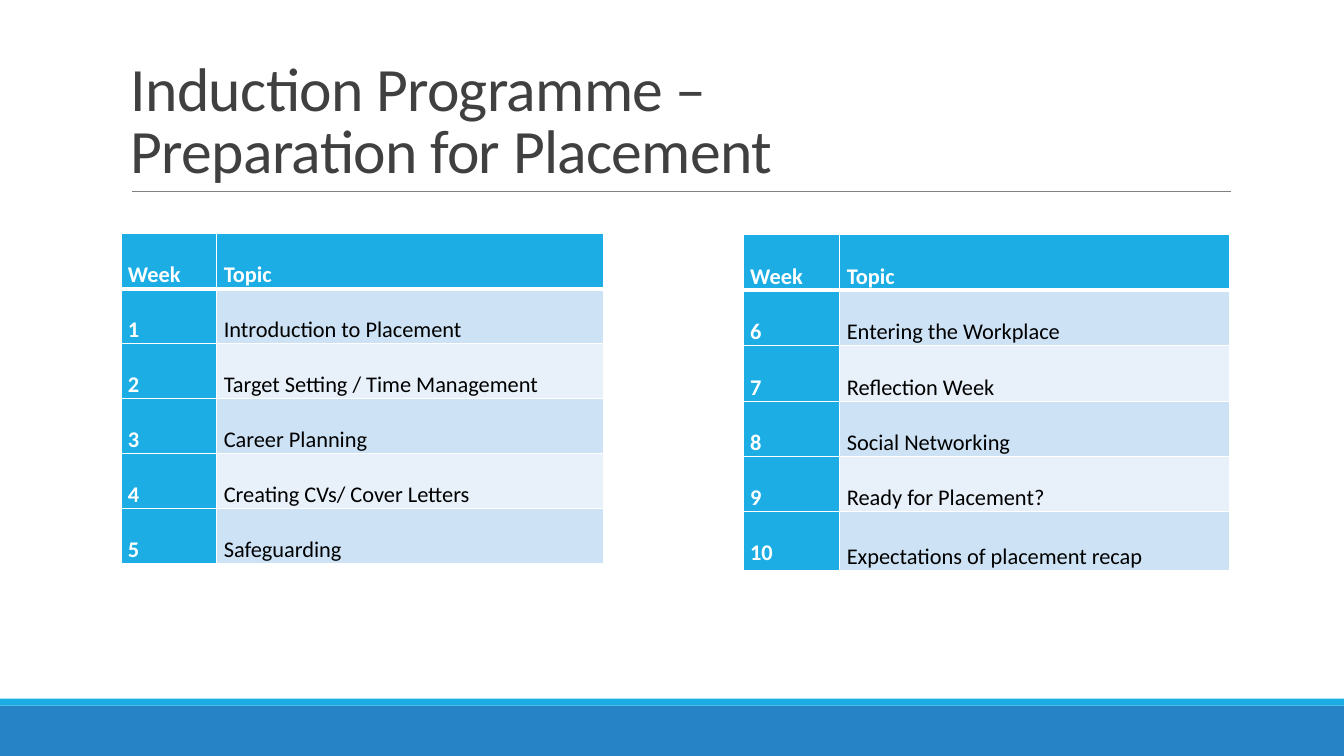
"""Build the induction programme slide with its two tables of weekly topics."""
from lxml import etree
from pptx import Presentation
from pptx.dml.color import RGBColor
from pptx.enum.shapes import MSO_CONNECTOR, MSO_SHAPE
from pptx.enum.text import MSO_ANCHOR, PP_ALIGN
from pptx.oxml.ns import qn
from pptx.util import Inches, Pt

STRAIGHT, RECTANGLE = MSO_CONNECTOR.STRAIGHT, MSO_SHAPE.RECTANGLE
BOTTOM, JUSTIFY = MSO_ANCHOR.BOTTOM, PP_ALIGN.JUSTIFY

THEME = {
    "font": "Calibri", "title_size": Pt(44), "cell_size": Pt(16),
    "title": "404040", "rule": "808080", "accent": "1CADE4", "footer": "2683C6",
    "white": "FFFFFF", "black": "000000", "bands": ("CDE3F5", "E8F1FA"),
}

deck = Presentation()
deck.slide_width, deck.slide_height = Inches(13.33), Inches(7.5)
page = deck.slides.add_slide(deck.slide_layouts[6])


def across(percent):
    return round(deck.slide_width * percent / 100)


def down(percent):
    return round(deck.slide_height * percent / 100)


for top, height, color in ((93.33, 6.67, "footer"), (92.4, 0.93, "accent")):
    bar = page.shapes.add_shape(RECTANGLE, 0, down(top), across(100), down(height))
    bar.shadow.inherit = False
    bar.fill.solid()
    bar.fill.fore_color.rgb = RGBColor.from_string(THEME[color])
    bar.line.fill.background()

rule = page.shapes.add_connector(STRAIGHT, across(9.83), down(25.33), across(91.6), down(25.33))
rule.line.color.rgb = RGBColor.from_string(THEME["rule"])
rule.line.width = Pt(0.5)
etree.SubElement(rule.element.spPr, qn("a:effectLst"))

box = page.shapes.add_textbox(across(9), down(4.13), across(82.5), down(21.2))
frame = box.text_frame
frame.word_wrap = True
frame.vertical_anchor = BOTTOM
frame.text = "Induction Programme –\vPreparation for Placement"
para = frame.paragraphs[0]
para.line_spacing = 0.85
for span in para.runs:
    span.font.name = THEME["font"]
    span.font.size = THEME["title_size"]
    span.font.color.rgb = RGBColor.from_string(THEME["title"])
    span.font._element.set("spc", "-50")

programme = (
    {"left": 9, "top": 30.93, "columns": (7.13, 28.81), "row": 7.28, "last_row": 7.28,
     "first_week": 1, "last_number_lift": 0,
     "topics": ("Introduction to Placement", "Target Setting / Time Management",
                "Career Planning", "Creating CVs/ Cover Letters", "Safeguarding")},
    {"left": 55.29, "top": 31.07, "columns": (7.2, 29.03), "row": 7.33, "last_row": 7.73,
     "first_week": 6, "last_number_lift": 0.04,
     "topics": ("Entering the Workplace", "Reflection Week", "Social Networking",
                "Ready for Placement?", "Expectations of placement recap")},
)

for half in programme:
    weeks = [(str(week), topic) for week, topic in enumerate(half["topics"], half["first_week"])]
    rows = [("Week", "Topic")] + weeks
    last = len(rows) - 1
    heights = [half["row"]] * last + [half["last_row"]]
    table = page.shapes.add_table(
        len(rows), 2, across(half["left"]), down(half["top"]),
        across(sum(half["columns"])), down(sum(heights))).table
    for column, width in zip(table.columns, half["columns"]):
        column.width = across(width)
    for row_index, texts in enumerate(rows):
        table.rows[row_index].height = down(heights[row_index])
        for column_index, text in enumerate(texts):
            cell = table.cell(row_index, column_index)
            heading = row_index == 0 or column_index == 0
            cell.margin_left = cell.margin_right = Inches(0.07)
            cell.margin_top = cell.margin_bottom = 0
            if row_index == last and column_index == 0:
                cell.margin_bottom = Inches(half["last_number_lift"])
            cell.vertical_anchor = BOTTOM
            widths = {"lnL": 1, "lnR": 1, "lnT": 3 if row_index == 1 else 1,
                      "lnB": 3 if row_index == 0 else 1}
            properties = cell._tc.get_or_add_tcPr()
            for side, width in widths.items():
                border = etree.SubElement(properties, qn("a:" + side), w=str(Pt(width)))
                paint = etree.SubElement(border, qn("a:solidFill"))
                etree.SubElement(paint, qn("a:srgbClr"), val=THEME["white"])
            fill = THEME["accent"] if heading else THEME["bands"][(row_index - 1) % 2]
            cell.fill.solid()
            cell.fill.fore_color.rgb = RGBColor.from_string(fill)
            cell.text_frame.text = text
            para = cell.text_frame.paragraphs[0]
            para.alignment = JUSTIFY
            font = para.runs[0].font
            font.name, font.size, font.bold = THEME["font"], THEME["cell_size"], heading
            font.color.rgb = RGBColor.from_string(THEME["white" if heading else "black"])

deck.save("out.pptx")
